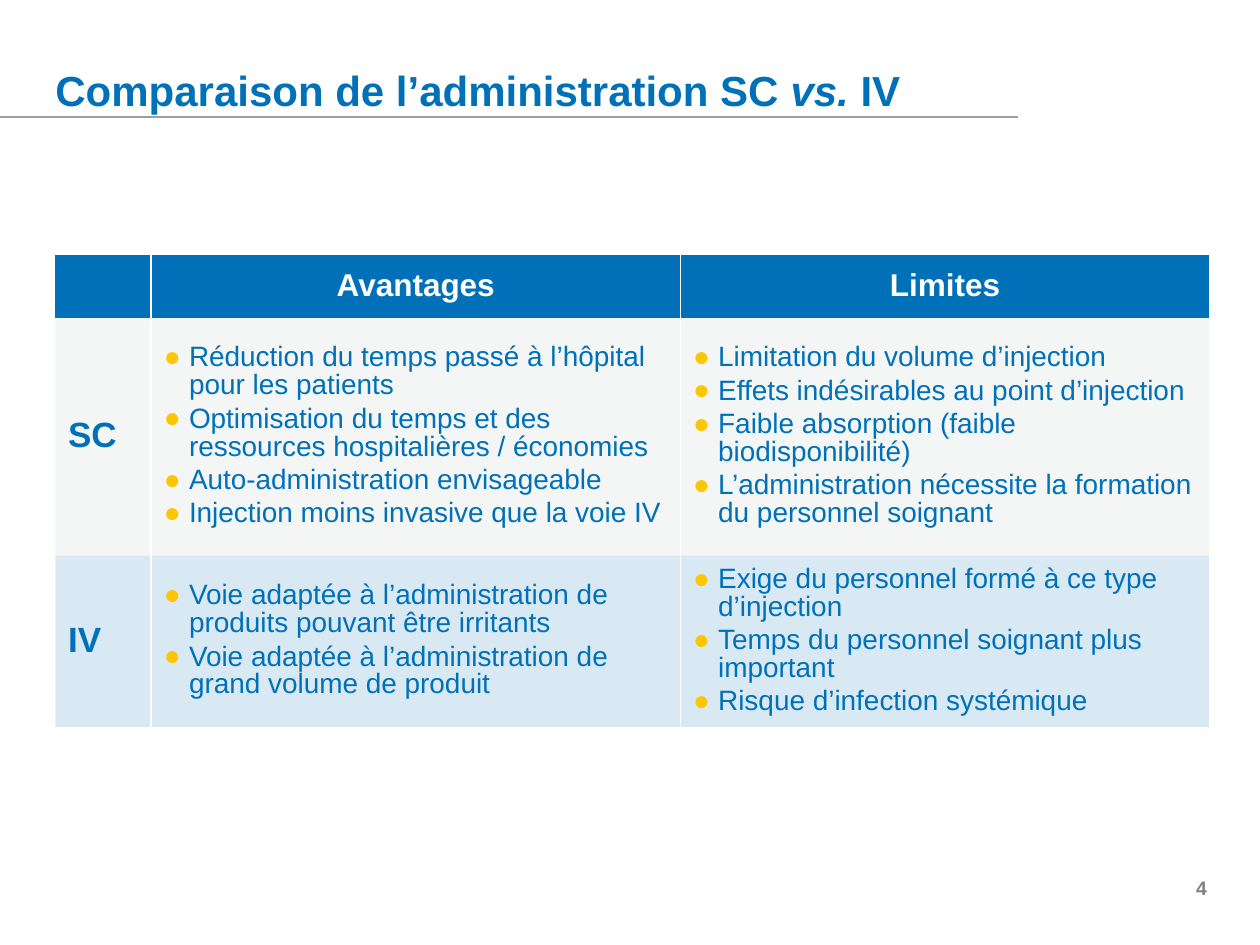
import lxml.etree
import pptx
import pptx.dml.color
import pptx.enum.shapes
import pptx.enum.text
import pptx.oxml
import pptx.oxml.ns
import pptx.util

Inches, Pt = pptx.util.Inches, pptx.util.Pt
RGBColor = pptx.dml.color.RGBColor
PP_ALIGN, MSO_ANCHOR = pptx.enum.text.PP_ALIGN, pptx.enum.text.MSO_ANCHOR
qn = pptx.oxml.ns.qn

BLUE = RGBColor(0x00, 0x71, 0xB9)
GREY = RGBColor(0x9C, 0x9E, 0x9F)
NUMBER_GREY = RGBColor(0x80, 0x80, 0x80)
YELLOW = RGBColor(0xFD, 0xC6, 0x00)
WHITE = RGBColor(0xFF, 0xFF, 0xFF)

HEADER = {"size": 18, "bold": True, "color": WHITE}
ROW_LABEL = {"size": 20, "bold": True, "color": BLUE}
BODY = {"size": 16, "bold": False, "color": BLUE}
TITLE = {"size": 24, "bold": True, "color": BLUE}
NUMBER = {"size": 11.1, "bold": True, "color": NUMBER_GREY}

COLUMN_WIDTHS = [0.76, 4.2, 4.2]
ROW_HEIGHTS = [0.5, 1.89, 1.36]
ROW_FILLS = [(BLUE, 100), (GREY, 10), (BLUE, 15)]  # colour, opacity in percent
ROWS = [
    ["", "Avantages", "Limites"],
    ["SC",
     ["Réduction du temps passé à l’hôpital pour les patients",
      "Optimisation du temps et des ressources hospitalières / économies",
      "Auto-administration envisageable",
      "Injection moins invasive que la voie IV"],
     ["Limitation du volume d’injection",
      "Effets indésirables au point d’injection",
      "Faible absorption (faible biodisponibilité)",
      "L’administration nécessite la formation du personnel soignant"]],
    ["IV",
     ["Voie adaptée à l’administration de produits pouvant être irritants",
      "Voie adaptée à l’administration de grand volume de produit"],
     ["Exige du personnel formé à ce type d’injection",
      "Temps du personnel soignant plus important",
      "Risque d’infection systémique"]],
]


def add_run(p, text, style, italic=False):
    r = p.add_run()
    r.text = text
    r.font.color.rgb = style["color"]
    values = {"name": "Arial", "size": Pt(style["size"]), "bold": style["bold"], "italic": italic}
    for name, value in values.items():
        setattr(r.font, name, value)


def add_text_box(left, top, width, height, wrap):
    """Add a text box without margins and return its text frame."""
    tf = s.shapes.add_textbox(Inches(left), Inches(top), Inches(width), Inches(height)).text_frame
    values = {"margin_left": 0, "margin_right": 0, "margin_top": 0, "margin_bottom": 0, "word_wrap": wrap}
    for name, value in values.items():
        setattr(tf, name, value)
    return tf


prs = pptx.Presentation()
prs.slide_width, prs.slide_height = Inches(10), Inches(7.5)
s = prs.slides.add_slide(prs.slide_layouts[6])

# Rule under the title
rule = s.shapes.add_connector(
    pptx.enum.shapes.MSO_CONNECTOR.STRAIGHT, 0, Inches(0.93), Inches(8.08), Inches(0.93))
rule.line.color.rgb = GREY
rule.line.width = Pt(1)
lxml.etree.SubElement(rule._element.spPr, qn("a:effectLst"))

# Slide number
p = add_text_box(0.44, 6.95, 9.14, 0.18, wrap=False).paragraphs[0]
p.alignment = PP_ALIGN.RIGHT
add_run(p, "4", NUMBER)

# Comparison table
table = s.shapes.add_table(
    len(ROWS), len(COLUMN_WIDTHS), Inches(0.44), Inches(2.02),
    Inches(sum(COLUMN_WIDTHS)), Inches(sum(ROW_HEIGHTS))).table
table.horz_banding = False
for column, width in zip(table.columns, COLUMN_WIDTHS):
    column.width = Inches(width)

for i, (row, height, (color, opacity)) in enumerate(zip(ROWS, ROW_HEIGHTS, ROW_FILLS)):
    table.rows[i].height = Inches(height)
    for j, content in enumerate(row):
        cell = table.cell(i, j)
        cell.vertical_anchor = MSO_ANCHOR.MIDDLE

        # White lines between columns, no lines between rows
        tcPr = cell._tc.get_or_add_tcPr()
        for side in ("L", "R", "T", "B"):
            ln = lxml.etree.SubElement(tcPr, qn("a:ln" + side), w=str(Pt(1)))
            if (side == "L" and j > 0) or side == "R":
                fill = lxml.etree.SubElement(ln, qn("a:solidFill"))
                lxml.etree.SubElement(fill, qn("a:srgbClr"), val=str(WHITE))
            else:
                lxml.etree.SubElement(ln, qn("a:noFill"))

        cell.fill.solid()
        cell.fill.fore_color.rgb = color
        if opacity < 100:
            srgb = tcPr.find(qn("a:solidFill")).find(qn("a:srgbClr"))
            lxml.etree.SubElement(srgb, qn("a:alpha"), val=str(opacity * 1000))

        tf = cell.text_frame
        if isinstance(content, str):
            if content:
                style = HEADER if i == 0 else ROW_LABEL
                p = tf.paragraphs[0]
                p.alignment = PP_ALIGN.CENTER if i == 0 else PP_ALIGN.LEFT
                p.line_spacing = 0.95
                p.space_after = Pt(0.2 * style["size"])
                add_run(p, content, style)
            continue
        for k, item in enumerate(content):
            p = tf.paragraphs[0] if k == 0 else tf.add_paragraph()
            p.line_spacing = Pt(16)
            p.space_after = Pt(3)
            pPr = p._p.get_or_add_pPr()
            pPr.set("marL", str(Inches(0.2)))
            pPr.set("indent", str(Inches(-0.2)))
            bullet_color = lxml.etree.SubElement(pPr, qn("a:buClr"))
            lxml.etree.SubElement(bullet_color, qn("a:srgbClr"), val=str(YELLOW))
            lxml.etree.SubElement(pPr, qn("a:buFont"), typeface="Arial")
            lxml.etree.SubElement(pPr, qn("a:buChar"), char="●")
            add_run(p, item, BODY)

# Title
tf = add_text_box(0.44, 0.29, 7.63, 0.85, wrap=True)
tf.vertical_anchor = MSO_ANCHOR.MIDDLE
p = tf.paragraphs[0]
add_run(p, "Comparaison de l’administration SC ", TITLE)
add_run(p, "vs.", TITLE, italic=True)
add_run(p, " IV", TITLE)

prs.save("out.pptx")
